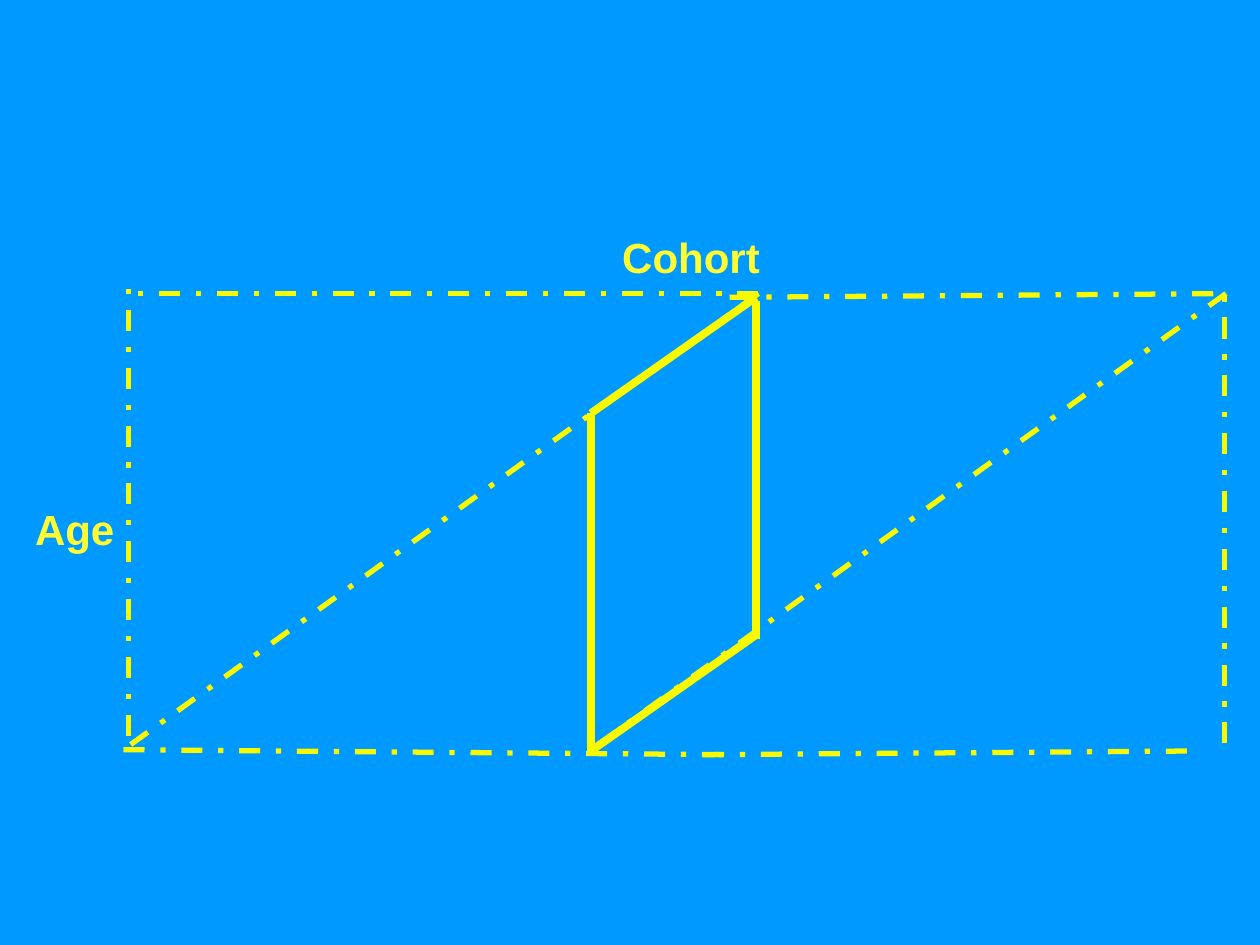
from pptx import Presentation
from pptx.dml.color import RGBColor
from pptx.enum.dml import MSO_LINE
from pptx.enum.shapes import MSO_CONNECTOR
from pptx.enum.text import MSO_AUTO_SIZE
from pptx.oxml.ns import qn
from pptx.util import Inches, Pt
from lxml import etree

STRAIGHT = MSO_CONNECTOR.STRAIGHT
DASH_DOT = MSO_LINE.DASH_DOT
FIT_SHAPE = MSO_AUTO_SIZE.SHAPE_TO_FIT_TEXT

BACKGROUND = RGBColor(0x00, 0x99, 0xFF)
LINE_YELLOW = RGBColor(0xF9, 0xF9, 0x00)
TEXT_YELLOW = RGBColor(0xFF, 0xFF, 0x33)

LEFT, COHORT_LEFT, COHORT_RIGHT, RIGHT = 0.98, 4.69, 6, 9.72
TOP, BOTTOM = 2.33, 5.95
COHORT_TOP, COHORT_BOTTOM = 2.36, 5.96
COHORT_RISE = 0.92
DIAGONAL_RUN = 5.04

FRAME_LINES = [
    ((LEFT, BOTTOM), (5.79, 5.99)),
    ((LEFT + DIAGONAL_RUN, TOP), (LEFT, TOP)),
    ((1.02, 5.84), (1.02, 2.29)),
    ((5.79, COHORT_TOP), (RIGHT, TOP)),
    ((5.58, 5.99), (9.52, COHORT_BOTTOM)),
    ((RIGHT, 5.9), (RIGHT, 2.35)),
]
COHORT_SIDES = [
    ((COHORT_RIGHT, 5.07), (COHORT_RIGHT, 2.39)),
    ((COHORT_LEFT, 5.99), (COHORT_LEFT, COHORT_TOP + COHORT_RISE)),
]


def add_line(slide, start, end, width, dash=None):
    connector = slide.shapes.add_connector(
        STRAIGHT, *(Inches(value) for value in (*start, *end)))
    connector.line.color.rgb = LINE_YELLOW
    connector.line.width = Pt(width)
    if dash is not None:
        connector.line.dash_style = dash
    etree.SubElement(connector._element.spPr, qn("a:effectLst"))


def add_dashed_line(slide, start, end):
    add_line(slide, start, end, 3, DASH_DOT)


def add_solid_line(slide, start, end):
    add_line(slide, start, end, 4.5)


def add_label(slide, text, left, top, width):
    box = slide.shapes.add_textbox(
        Inches(left), Inches(top), Inches(width), Inches(0.5))
    frame = box.text_frame
    frame.word_wrap = False
    frame.auto_size = FIT_SHAPE
    paragraph = frame.paragraphs[0]
    paragraph.text = text
    paragraph.font.name = "Arial"
    paragraph.font.size = Pt(24)
    paragraph.font.bold = True
    paragraph.font.color.rgb = TEXT_YELLOW


def main():
    presentation = Presentation()
    presentation.slide_width = Inches(10)
    presentation.slide_height = Inches(7.5)
    slide = presentation.slides.add_slide(presentation.slide_layouts[6])
    slide.background.fill.solid()
    slide.background.fill.fore_color.rgb = BACKGROUND

    for left in (LEFT, COHORT_LEFT):
        add_dashed_line(slide, (left + DIAGONAL_RUN, TOP), (left, BOTTOM))
    add_label(slide, "Age", 0.18, 3.95, 0.84)
    add_label(slide, "Cohort", 4.84, 1.79, 1.3)
    for start, end in FRAME_LINES:
        add_dashed_line(slide, start, end)
    for start, end in COHORT_SIDES:
        add_solid_line(slide, start, end)
    for bottom in (COHORT_TOP + COHORT_RISE, COHORT_BOTTOM):
        add_solid_line(slide, (COHORT_LEFT, bottom),
                       (COHORT_RIGHT, bottom - COHORT_RISE))

    presentation.save("out.pptx")


if __name__ == "__main__":
    main()
